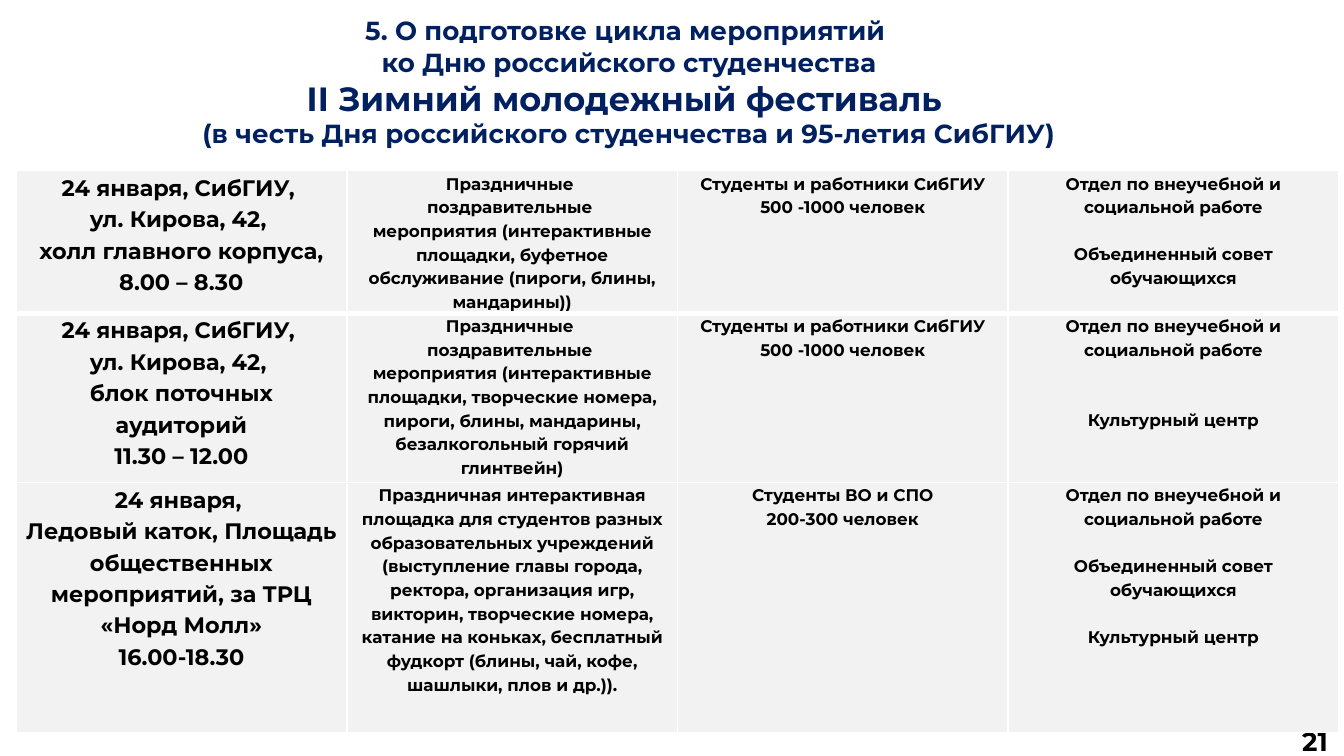
from typing import NamedTuple

from lxml.etree import SubElement
from pptx import Presentation
from pptx.dml.color import RGBColor
from pptx.enum.text import PP_ALIGN
from pptx.oxml.ns import qn
from pptx.util import Inches, Pt

NAVY, BLACK, WHITE, GREY = "002060", "000000", "FFFFFF", "F2F2F2"
GAP = 12.6


class Line(NamedTuple):
    """A paragraph and the space before it in points."""
    text: str
    before: float = 0


class Event(NamedTuple):
    """A festival event: one table row."""
    height: float
    place: list[Line]
    programme: list[Line]
    audience: list[Line]
    organisers: list[Line]


DEPARTMENT = Line("Отдел по внеучебной и социальной работе")
COUNCIL = Line("Объединенный совет обучающихся", GAP)
VENUE = [Line("24 января, СибГИУ, "), Line("ул. Кирова, 42, ")]
GREETING = [Line("Праздничные "), Line("поздравительные ")]
UNIVERSITY = [Line("Студенты и работники СибГИУ"), Line("500 -1000 человек")]

EVENTS = [
    Event(
        1.06,
        VENUE + [Line("холл главного корпуса,"), Line("8.00 – 8.30")],
        GREETING + [Line("мероприятия (интерактивные площадки, буфетное "
                         "обслуживание (пироги, блины, мандарины))")],
        UNIVERSITY,
        [DEPARTMENT, COUNCIL],
    ),
    Event(
        1.26,
        VENUE + [Line("блок поточных аудиторий"), Line("11.30 – 12.00")],
        GREETING + [Line("мероприятия (интерактивные площадки, творческие номера, "
                         "пироги, блины, мандарины, безалкогольный горячий глинтвейн)")],
        UNIVERSITY,
        [DEPARTMENT, Line("Культурный центр", 2 * GAP)],
    ),
    Event(
        1.86,
        [Line("24 января, "),
         Line("Ледовый каток, Площадь общественных мероприятий, за ТРЦ «Норд Молл»"),
         Line("16.00-18.30")],
        [Line("Праздничная интерактивная площадка для студентов разных "
              "образовательных учреждений"),
         Line("(выступление главы города, ректора, организация игр, викторин, "
              "творческие номера, катание на коньках, бесплатный фудкорт "
              "(блины, чай, кофе, шашлыки, плов и др.)).")],
        [Line("Студенты ВО и СПО"), Line("200-300 человек")],
        [DEPARTMENT, COUNCIL, Line("Культурный центр", GAP)],
    ),
]

TITLE = [
    ("5. О подготовке цикла мероприятий ", 14),
    ("ко Дню российского студенчества", 14),
    ("II Зимний молодежный фестиваль ", 18),
    ("(в честь Дня российского студенчества и 95-летия СибГИУ)", 14),
]


def rgb(value: str) -> RGBColor:
    """Turn a hex string into a colour."""
    return RGBColor.from_string(value)


def add_line(tf, index: int, text: str, size: float, color: str, **spacing) -> None:
    """Write one centred bold paragraph into a text frame."""
    p = tf.paragraphs[0] if index == 0 else tf.add_paragraph()
    for name, value in {"alignment": PP_ALIGN.CENTER, **spacing}.items():
        setattr(p, name, value)
    r = p.add_run()
    r.text = text
    for name, value in {"name": "Montserrat", "size": Pt(size), "bold": True}.items():
        setattr(r.font, name, value)
    r.font.color.rgb = rgb(color)


def add_text(s, box: tuple, lines: list[tuple[str, float]], color: str) -> None:
    """Add a text box of centred lines."""
    tf = s.shapes.add_textbox(*map(Inches, box)).text_frame
    tf.word_wrap = True
    for i, (text, size) in enumerate(lines):
        add_line(tf, i, text, size, color)


def set_borders(cell, widths: dict[str, float]) -> None:
    """Draw white borders of the given widths on a cell."""
    props = cell._tc.get_or_add_tcPr()
    for side, width in widths.items():
        ln = SubElement(props, qn(f"a:ln{side}"), w=str(Pt(width)))
        fill = SubElement(ln, qn("a:solidFill"))
        SubElement(fill, qn("a:srgbClr"), val=WHITE)


def fill_cell(cell, lines: list[Line], size: float, top: float, bottom: float) -> None:
    """Format a table cell and write its lines."""
    set_borders(cell, {"L": 1, "R": 1, "T": top, "B": bottom})
    cell.fill.solid()
    cell.fill.fore_color.rgb = rgb(GREY)
    margins = {"margin_left": 0.06, "margin_right": 0.06,
               "margin_top": 0, "margin_bottom": 0}
    for name, value in margins.items():
        setattr(cell, name, Inches(value))
    for i, line in enumerate(lines):
        spacing = {"line_spacing": 1.15}
        if line.before:
            spacing["space_before"] = Pt(line.before)
        add_line(cell.text_frame, i, line.text, size, BLACK, **spacing)


def add_schedule(s, events: list[Event]) -> None:
    """Add the table of events."""
    height = sum(event.height for event in events)
    box = map(Inches, (0.12, 1.27, 9.84, height))
    table = s.shapes.add_table(len(events), 4, *box).table
    table.first_row = table.horz_banding = False
    for i, event in enumerate(events):
        table.rows[i].height = Inches(event.height)
        top, bottom = (3 if i == 1 else 1), (3 if i == 0 else 1)
        for j, lines in enumerate(event[1:]):
            fill_cell(table.cell(i, j), lines, 12 if j == 0 else 9, top, bottom)


def main() -> None:
    """Build the slide and save it."""
    prs = Presentation()
    prs.slide_width = Inches(10)
    prs.slide_height = prs.slide_width * 9 // 16
    s = prs.slides.add_slide(prs.slide_layouts[6])
    add_text(s, (0.19, 0.06, 8.98, 1.11), TITLE, NAVY)
    add_text(s, (9.57, 5.35, 0.43, 0.29), [("21", 14)], BLACK)
    add_schedule(s, EVENTS)
    prs.save("out.pptx")


if __name__ == "__main__":
    main()
